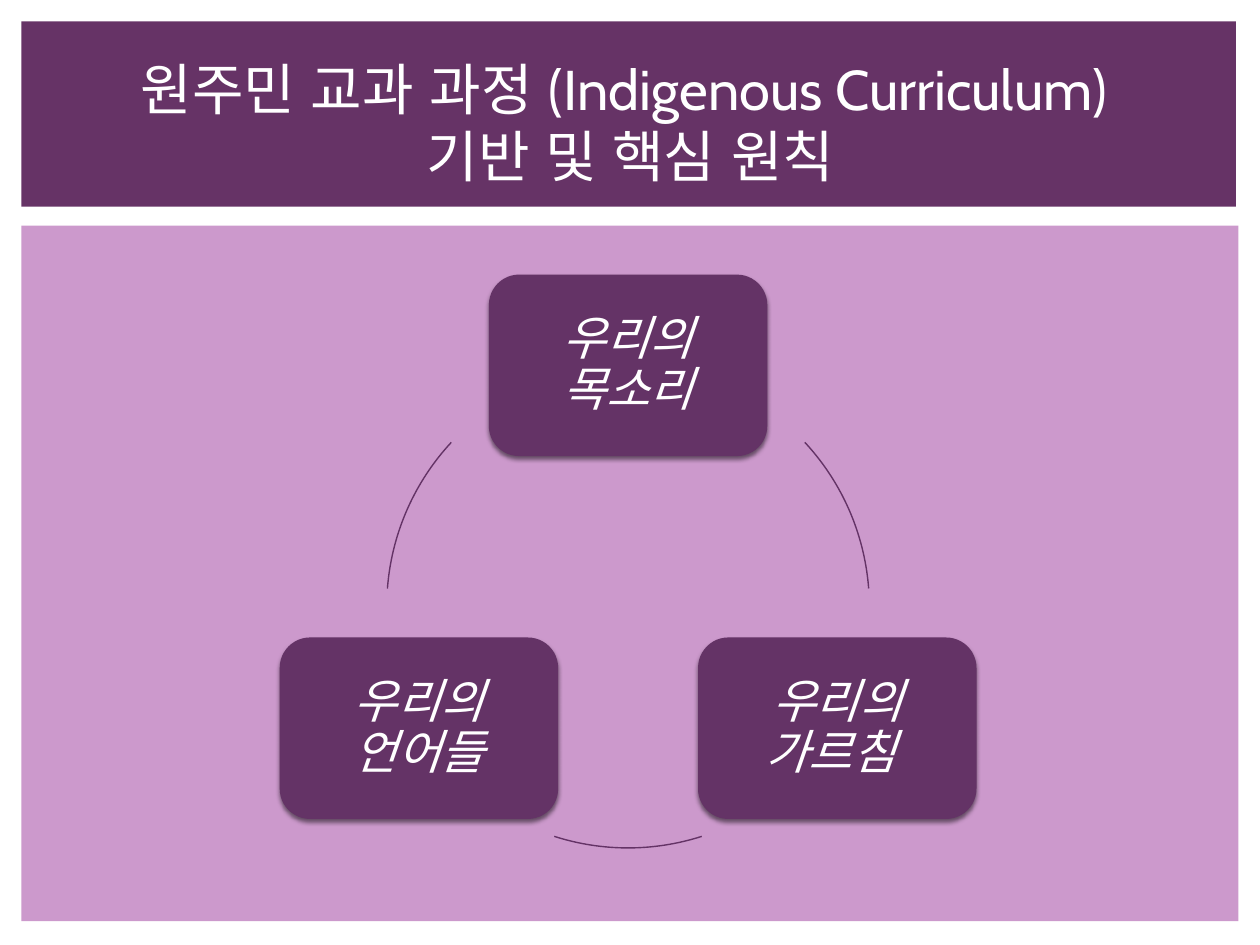
from typing import NamedTuple

import pptx
import pptx.dml.color
import pptx.enum.lang
import pptx.enum.shapes
import pptx.enum.text
import pptx.oxml
import pptx.util

Inches = pptx.util.Inches
Pt = pptx.util.Pt
RGBColor = pptx.dml.color.RGBColor
ShapeType = pptx.enum.shapes.MSO_SHAPE

BAND_PURPLE = RGBColor(0x66, 0x33, 0x66)
CARD_PURPLE = RGBColor(0x64, 0x33, 0x66)
LILAC = RGBColor(0xCC, 0x99, 0xCC)
WHITE = RGBColor(0xFF, 0xFF, 0xFF)
FONT = "Cabin"

CARD_WIDTH, CARD_HEIGHT = 2.21, 1.44
RING_LEFT, RING_TOP, RING_SIZE = 3.07, 2.9, 3.83

CARD_SHADOW = (
    '<a:effectLst xmlns:a="http://schemas.openxmlformats.org/drawingml/2006/main">'
    '<a:outerShdw blurRad="31750" dist="25400" dir="5400000" rotWithShape="0">'
    '<a:srgbClr val="000000"><a:alpha val="50000"/></a:srgbClr>'
    "</a:outerShdw></a:effectLst>"
)


class Principle(NamedTuple):
    """A card and the arc that leads on from it, angles clockwise in degrees."""

    text: str
    left: float
    top: float
    arc_start: float
    arc_end: float


PRINCIPLES = [
    Principle("우리의 목소리", 3.88, 2.18, 317.1, 355.7),
    Principle("우리의 가르침 ", 5.54, 5.06, 72.2, 107.8),
    Principle("우리의 언어들", 2.22, 5.06, 184.3, 222.9),
]


def add_block(slide, kind, left: float, top: float, width: float, height: float,
              color: RGBColor):
    shape = slide.shapes.add_shape(
        kind, Inches(left), Inches(top), Inches(width), Inches(height))
    shape.shadow.inherit = False
    shape.fill.solid()
    shape.fill.fore_color.rgb = color
    shape.line.fill.background()
    return shape


def write_text(shape, text: str, size: int, italic: bool = False):
    frame = shape.text_frame
    frame.word_wrap = True
    frame.vertical_anchor = pptx.enum.text.MSO_ANCHOR.MIDDLE
    frame.text = text
    paragraph = frame.paragraphs[0]
    paragraph.alignment = pptx.enum.text.PP_ALIGN.CENTER
    paragraph.font.name = FONT
    paragraph.font.size = Pt(size)
    paragraph.font.italic = italic
    paragraph.font.color.rgb = WHITE
    for run in paragraph.runs:
        run.font.language_id = pptx.enum.lang.MSO_LANGUAGE_ID.KOREAN
    return frame


def add_card(slide, principle: Principle) -> None:
    card = add_block(slide, ShapeType.ROUNDED_RECTANGLE, principle.left,
                     principle.top, CARD_WIDTH, CARD_HEIGHT, CARD_PURPLE)
    card.adjustments[0] = 0.167
    properties = card._element.spPr
    properties.replace(properties.find(pptx.oxml.ns.qn("a:effectLst")),
                       pptx.oxml.parse_xml(CARD_SHADOW))
    frame = write_text(card, principle.text, 27, italic=True)
    frame.paragraphs[0].line_spacing = 0.9
    frame.margin_left = frame.margin_right = Inches(0.11)
    frame.margin_top = frame.margin_bottom = Inches(0.11)


def add_arc(slide, principle: Principle) -> None:
    arc = slide.shapes.add_shape(
        ShapeType.ARC, Inches(RING_LEFT), Inches(RING_TOP),
        Inches(RING_SIZE), Inches(RING_SIZE))
    arc.shadow.inherit = False
    arc.fill.background()
    arc.line.color.rgb = CARD_PURPLE
    arc.line.width = Pt(0.79)
    # Angles are stored in 60000ths of a degree, adjustments in 100000ths
    arc.adjustments[0] = principle.arc_start * 0.6
    arc.adjustments[1] = principle.arc_end * 0.6


def main() -> None:
    presentation = pptx.Presentation()
    presentation.slide_width = Inches(10)
    presentation.slide_height = Inches(7.5)
    slide = presentation.slides.add_slide(presentation.slide_layouts[6])

    # Background panels
    add_block(slide, ShapeType.RECTANGLE, 0.17, 1.79, 9.66, 5.52, LILAC)
    add_block(slide, ShapeType.RECTANGLE, 0.17, 0.17, 9.64, 1.47, BAND_PURPLE)

    # Title
    title = slide.shapes.add_textbox(
        Inches(0.42), Inches(0.39), Inches(9.17), Inches(1.15))
    write_text(title, "원주민 교과 과정 (Indigenous Curriculum) \v기반 및 핵심 원칙", 32)

    # Cycle of principles
    for principle in PRINCIPLES:
        add_card(slide, principle)
        add_arc(slide, principle)

    presentation.save("out.pptx")


if __name__ == "__main__":
    main()
